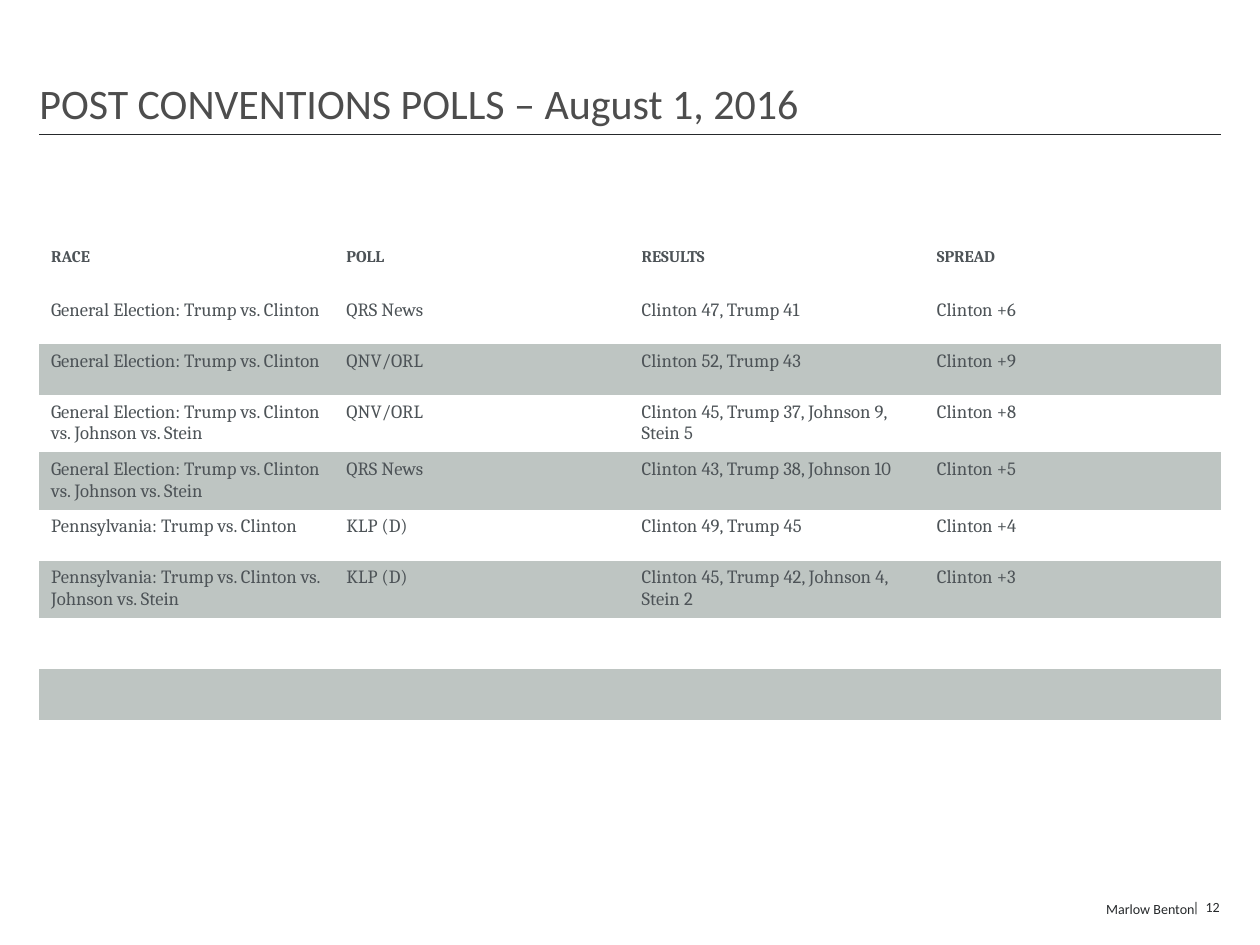
"""Build a slide with a table of national and state polls."""
from lxml.etree import SubElement
from pptx import Presentation
from pptx.dml.color import RGBColor
from pptx.enum.shapes import MSO_CONNECTOR
from pptx.enum.text import MSO_ANCHOR, PP_ALIGN
from pptx.oxml.ns import qn
from pptx.util import Inches, Pt

TITLE = "POST CONVENTIONS POLLS – August 1, 2016"
FIRM = "Marlow Benton"
PAGE = "|  12"
TWO_WAY = "Trump vs. Clinton"
FOUR_WAY = "Trump vs. Clinton vs. Johnson vs. Stein"
HEADER = ("RACE", "POLL", "RESULTS", "SPREAD")
POLLS = [
    (f"General Election: {TWO_WAY}", "QRS News", "Clinton 47, Trump 41", "Clinton +6"),
    (f"General Election: {TWO_WAY}", "QNV/ORL", "Clinton 52, Trump 43", "Clinton +9"),
    (f"General Election: {FOUR_WAY}", "QNV/ORL", "Clinton 45, Trump 37, Johnson 9, Stein 5", "Clinton +8"),
    (f"General Election: {FOUR_WAY}", "QRS News", "Clinton 43, Trump 38, Johnson 10", "Clinton +5"),
    (f"Pennsylvania: {TWO_WAY}", "KLP (D)", "Clinton 49, Trump 45", "Clinton +4"),
    (f"Pennsylvania: {FOUR_WAY}", "KLP (D)", "Clinton 45, Trump 42, Johnson 4, Stein 2", "Clinton +3"),
]
EMPTY_ROWS = 3

TITLE_GRAY = RGBColor(0x4D, 0x4D, 0x4D)
TEXT_GRAY = RGBColor(0x4D, 0x53, 0x57)
INK = RGBColor(0x26, 0x29, 0x2B)
BAND = RGBColor(0xBE, 0xC5, 0xC2)
PLAIN_TABLE_STYLE = "{2D5ABB26-0587-4C30-8999-92F81FD0307C}"

WIDTH = 7.5
HEIGHT = WIDTH * 3 / 4
CONTENT_WIDTH = 7.03
MARGIN = (WIDTH - CONTENT_WIDTH) / 2
RULE_TOP = 0.8
TABLE_TOP, TABLE_HEIGHT = 1.44, 3.15
TALL_ROW = 0.34


def format_font(font, name, size, color, bold=False):
    """Set the face, size, colour and weight of a font."""
    font.name, font.size, font.bold = name, Pt(size), bold
    font.color.rgb = color


def add_text(slide, text, box, size, color, anchor, align, inset=0.05, right=0, wrap=True):
    """Add one line of Calibri text in a box."""
    shape = slide.shapes.add_textbox(*map(Inches, box))
    frame = shape.text_frame
    frame.text = text
    frame.word_wrap = wrap
    frame.vertical_anchor = anchor
    frame.margin_left, frame.margin_right = 0, Inches(right)
    frame.margin_top = frame.margin_bottom = Inches(inset)
    paragraph = frame.paragraphs[0]
    paragraph.alignment = align
    format_font(paragraph.runs[0].font, "Calibri", size, color)


def add_rule(slide):
    """Draw the line under the title."""
    rule = slide.shapes.add_connector(
        MSO_CONNECTOR.STRAIGHT, Inches(WIDTH - MARGIN), Inches(RULE_TOP),
        Inches(MARGIN), Inches(RULE_TOP))
    rule.line.color.rgb = INK
    rule.line.width = Pt(0.5)
    SubElement(rule._element.spPr, qn("a:effectLst"))


def fill_cell(cell, text, heading, banded):
    """Write and colour one table cell."""
    cell.margin_left = cell.margin_right = Inches(0.07)
    cell.margin_top = cell.margin_bottom = Pt(2.7)
    if banded:
        cell.fill.solid()
        cell.fill.fore_color.rgb = BAND
    else:
        cell.fill.background()
    cell.text_frame.text = text
    paragraph = cell.text_frame.paragraphs[0]
    for run in paragraph.runs:
        format_font(run.font, "Cambria", 7 if heading else 8, TEXT_GRAY, heading)
    if not text:
        SubElement(paragraph._p, qn("a:endParaRPr")).set("sz", "800")


def add_polls(slide):
    """Add the poll table with a band on every second row."""
    rows = [HEADER, *POLLS, *[("",) * len(HEADER)] * EMPTY_ROWS]
    tall = [FOUR_WAY in row[0] for row in rows]
    short_row = (TABLE_HEIGHT - TALL_ROW * sum(tall)) / (len(rows) - sum(tall))
    frame = slide.shapes.add_table(
        len(rows), len(HEADER), Inches(MARGIN), Inches(TABLE_TOP),
        Inches(CONTENT_WIDTH), Inches(TABLE_HEIGHT))
    table = frame.table
    table._tbl.tblPr.find(qn("a:tableStyleId")).text = PLAIN_TABLE_STYLE
    table.horz_banding = False
    for row_index, row in enumerate(rows):
        table.rows[row_index].height = Inches(TALL_ROW if tall[row_index] else short_row)
        banded = row_index > 0 and row_index % 2 == 0
        for column_index, text in enumerate(row):
            fill_cell(table.cell(row_index, column_index), text, row_index == 0, banded)


def main():
    """Assemble and save the slide."""
    presentation = Presentation()
    presentation.slide_width, presentation.slide_height = Inches(WIDTH), Inches(HEIGHT)
    slide = presentation.slides.add_slide(presentation.slide_layouts[6])
    add_rule(slide)
    add_text(slide, FIRM, (4.73, 5.29, 2.38, 0.24), 6, INK, MSO_ANCHOR.MIDDLE, PP_ALIGN.RIGHT)
    add_text(slide, PAGE, (7.1, 5.3, 0.26, 0.2), 6, INK, MSO_ANCHOR.MIDDLE, PP_ALIGN.RIGHT,
             right=0.1, wrap=False)
    add_polls(slide)
    add_text(slide, TITLE, (MARGIN, 0.31, CONTENT_WIDTH, 0.49), 18, TITLE_GRAY,
             MSO_ANCHOR.BOTTOM, PP_ALIGN.LEFT, inset=0.04)
    presentation.save("out.pptx")


if __name__ == "__main__":
    main()
